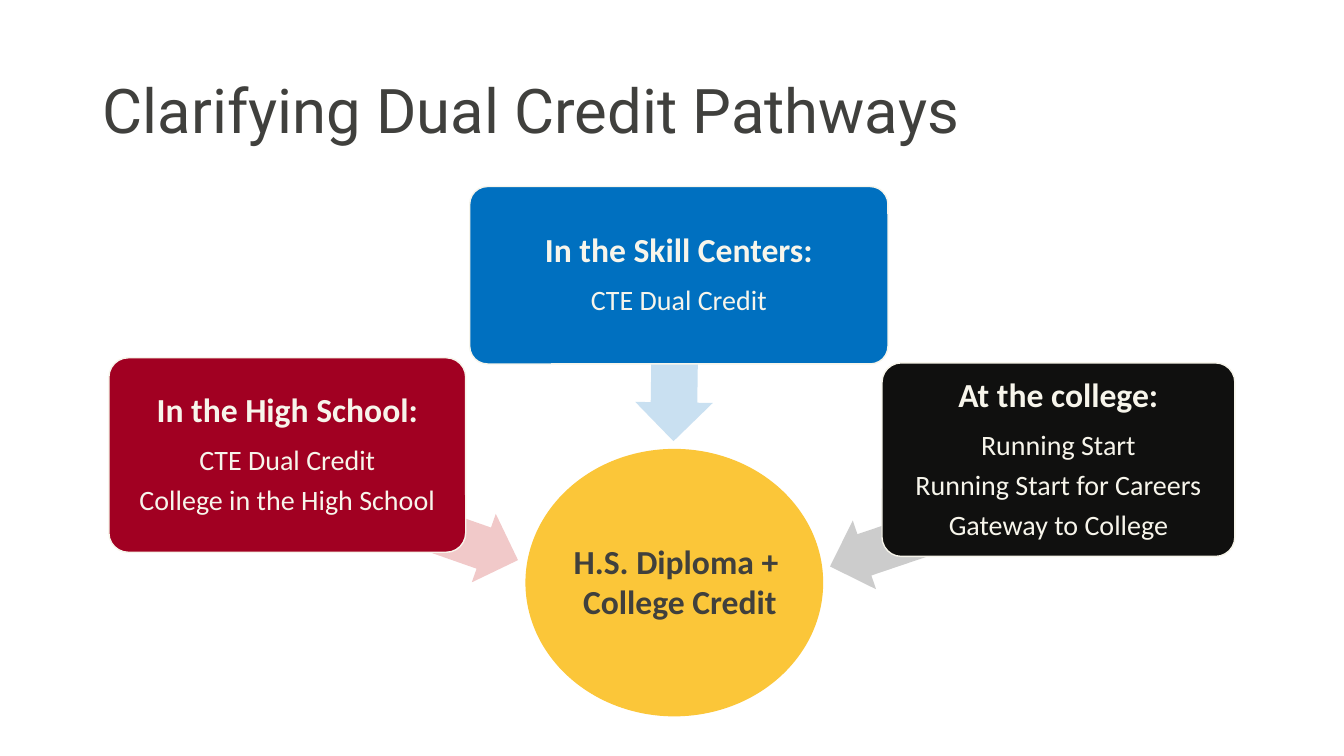
from dataclasses import dataclass

from lxml import etree
from pptx import Presentation
from pptx import util as u
from pptx.dml.color import RGBColor
from pptx.enum import shapes, text
from pptx.oxml.ns import qn

W, H = u.Inches(13.33), u.Inches(7.5)


@dataclass(frozen=True)
class Theme:
    ink: str = "40403D"
    cream: str = "F7F5EB"
    gold: str = "FBC639"
    red: str = "A10022"
    red_arrow: str = "C00000"
    blue: str = "0070C0"
    black: str = "10100F"
    title_font: str = "Roboto"
    body_font: str = "Calibri"
    title: int = 44
    heading: int = 24
    item: int = 20
    arrow_alpha: int = 21


T = Theme()

# Boxes are left, top, width, height in percent of the slide.
TITLE_BOX = (6.9, 5.33, 86.25, 19.33)
HUB_BOX = (39.15, 59.47, 22.05, 35.2)

# box, fill, arrow colour, heading, items,
# arrow centre (shares of the box), arrow size (percent of the slide), rotation
PATHWAYS = [
    ((8.1, 47.33, 26.55, 25.73), T.red, T.red_arrow, "In the High School:",
     ["CTE Dual Credit", "College in the High School"],
     (0.82, 0.83), (18.38, 9.6), 199.3),
    ((34.95, 24.67, 31.12, 23.47), T.blue, T.blue, "In the Skill Centers:",
     ["CTE Dual Credit"],
     (0.49, 0.97), (12.3, 10.27), 270.8),
    ((65.63, 48, 26.25, 25.6), T.black, T.black, "At the college:",
     ["Running Start", "Running Start for Careers", "Gateway to College"],
     (0.18, 0.85), (18.15, 9.6), 341.3),
]


def emu(box):
    x, y, w, h = box
    return [int(v * side / 100) for v, side in ((x, W), (y, H), (w, W), (h, H))]


def set_font(p, name, size, color, bold=False):
    p.font.name, p.font.size, p.font.bold = name, u.Pt(size), bold
    p.font.color.rgb = RGBColor.from_string(color)


def add_filled(s, kind, box, fill, line=None):
    sp = s.shapes.add_shape(kind, *emu(box))
    sp.shadow.inherit = False
    sp.fill.solid()
    sp.fill.fore_color.rgb = RGBColor.from_string(fill)
    if line:
        sp.line.color.rgb = RGBColor.from_string(line)
        sp.line.width = u.Pt(1)
    else:
        sp.line.fill.background()
    return sp


def set_margins(tf, left, top, right, bottom):
    tf.margin_left, tf.margin_top = u.Inches(left), u.Inches(top)
    tf.margin_right, tf.margin_bottom = u.Inches(right), u.Inches(bottom)
    tf.vertical_anchor = text.MSO_ANCHOR.MIDDLE


def write_lines(tf, lines):
    """Fill the frame with centred paragraphs and return them."""
    tf.text = "\n".join(lines)
    for p in tf.paragraphs:
        p.alignment = text.PP_ALIGN.CENTER
    return tf.paragraphs


def add_title(s, box, words):
    sp = s.shapes.title
    sp.left, sp.top, sp.width, sp.height = emu(box)
    tf = sp.text_frame
    tf.text = words
    tf.vertical_anchor = text.MSO_ANCHOR.MIDDLE
    p = tf.paragraphs[0]
    p.alignment, p.line_spacing = text.PP_ALIGN.LEFT, 0.9
    set_font(p, T.title_font, T.title, T.ink)


def add_hub(s, box):
    sp = add_filled(s, shapes.MSO_SHAPE.OVAL, box, T.gold, T.gold)
    tf = sp.text_frame
    tf.word_wrap = False
    set_margins(tf, 0.11, 0, 0, 0.03)
    for p in write_lines(tf, ["H.S. Diploma + ", "College Credit"]):
        set_font(p, T.body_font, T.heading, T.ink, True)


def add_arrow(s, box, color, center, size, rotation):
    """Place a translucent arrow centred at shares of the given box."""
    x, y, w, h = box
    length, thickness = size
    left = x + center[0] * w - length / 2
    top = y + center[1] * h - thickness / 2
    sp = add_filled(s, shapes.MSO_SHAPE.LEFT_ARROW, (left, top, length, thickness), color)
    sp.adjustments[0], sp.adjustments[1] = 0.6, 0.5
    sp.rotation = rotation
    clr = sp.fill._xPr.find(qn("a:solidFill"))[0]
    etree.SubElement(clr, qn("a:alpha"), val=str(T.arrow_alpha * 1000))


def add_pathway(s, box, fill, arrow_color, heading, items, center, size, rotation):
    add_arrow(s, box, arrow_color, center, size, rotation)
    sp = add_filled(s, shapes.MSO_SHAPE.ROUNDED_RECTANGLE, box, fill, T.cream)
    sp.adjustments[0] = 0.1
    tf = sp.text_frame
    tf.word_wrap = True
    set_margins(tf, 0.04, 0.04, 0.04, 0.04)
    for i, p in enumerate(write_lines(tf, [heading, *items])):
        p.line_spacing = 0.9
        p.space_after = u.Pt(7 if i else 12)
        set_font(p, T.body_font, T.item if i else T.heading, T.cream, i == 0)


def main():
    prs = Presentation()
    prs.slide_width, prs.slide_height = W, H
    s = prs.slides.add_slide(prs.slide_layouts[5])
    add_title(s, TITLE_BOX, "Clarifying Dual Credit Pathways")
    add_hub(s, HUB_BOX)
    for pathway in PATHWAYS:
        add_pathway(s, *pathway)
    prs.save("out.pptx")


if __name__ == "__main__":
    main()
